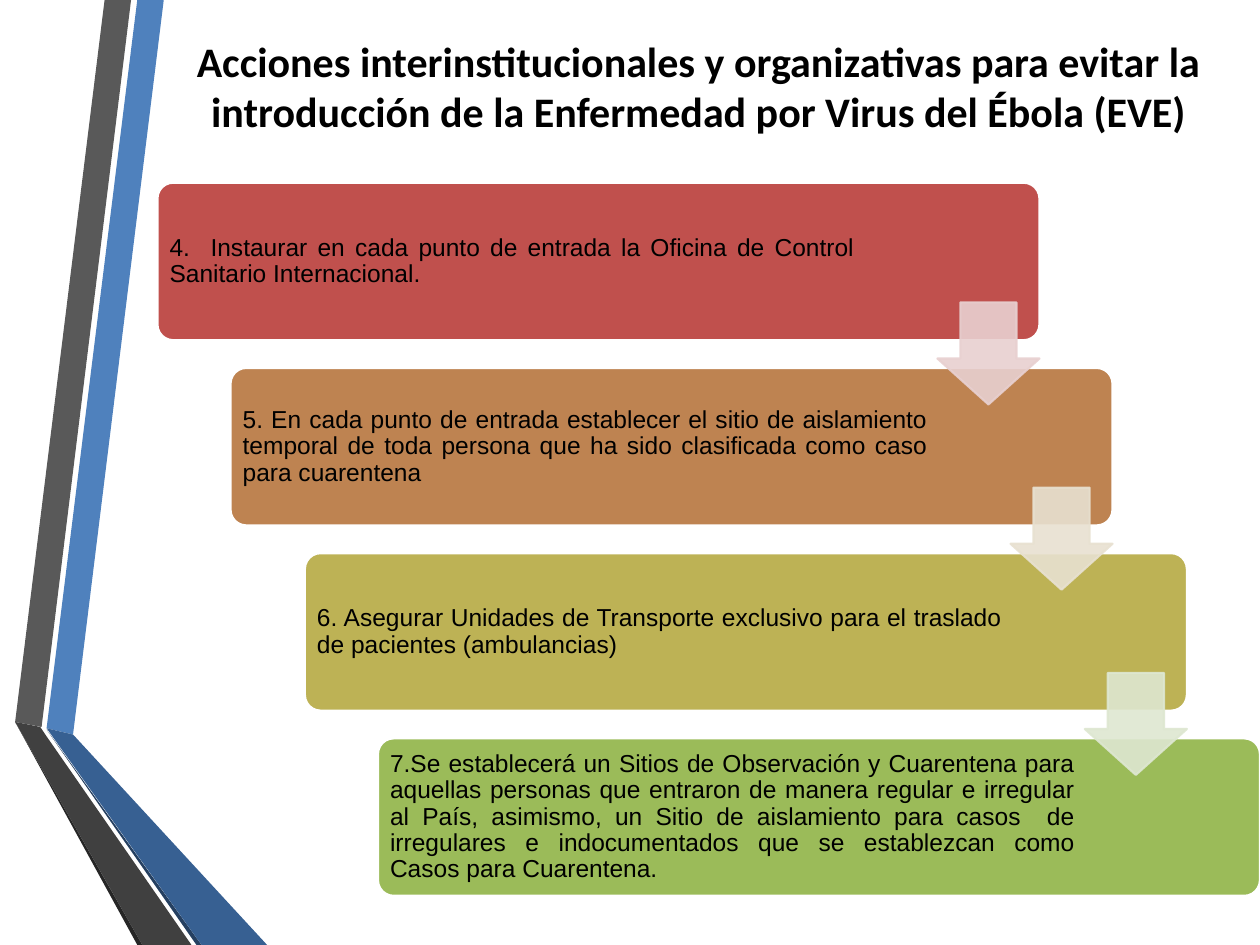
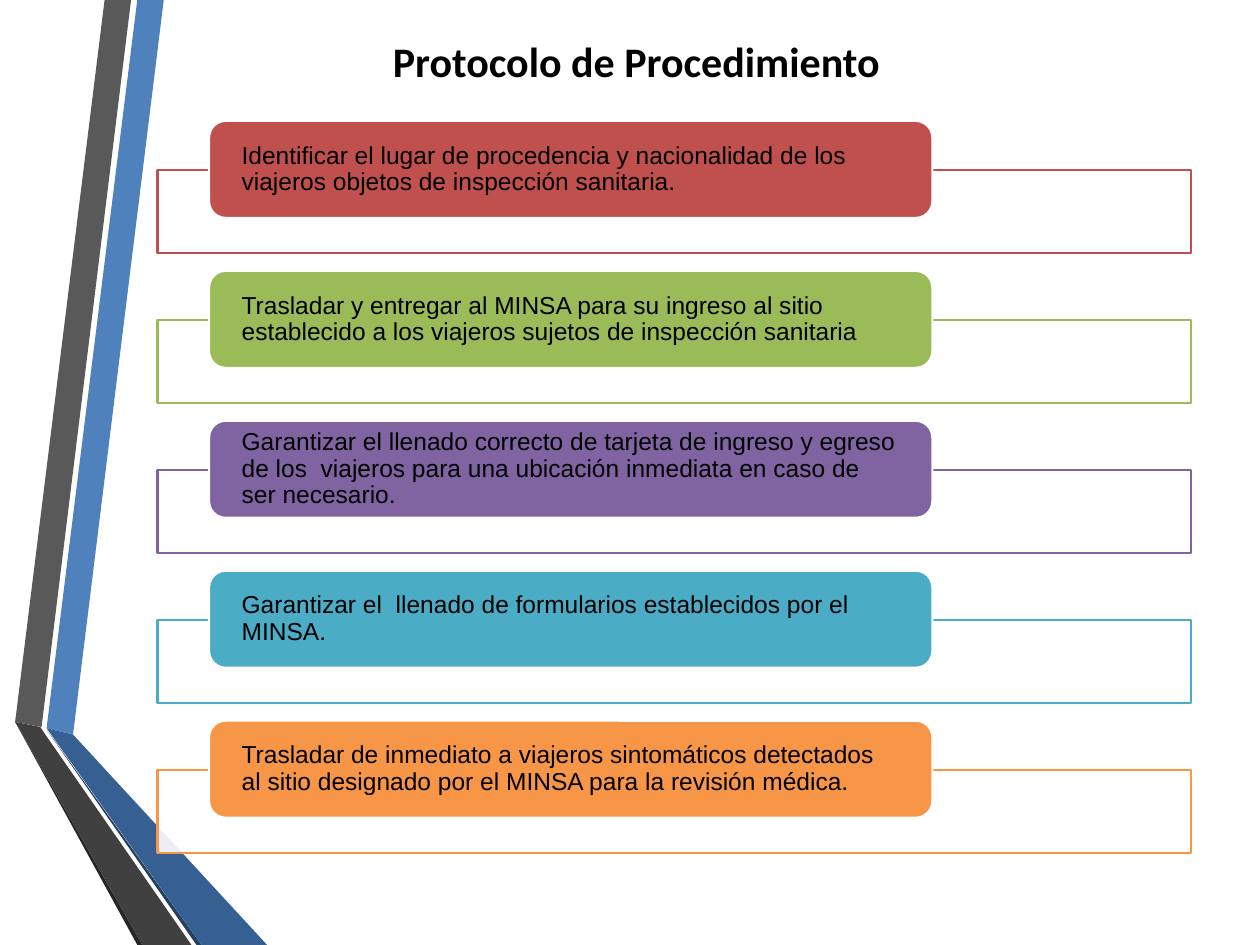
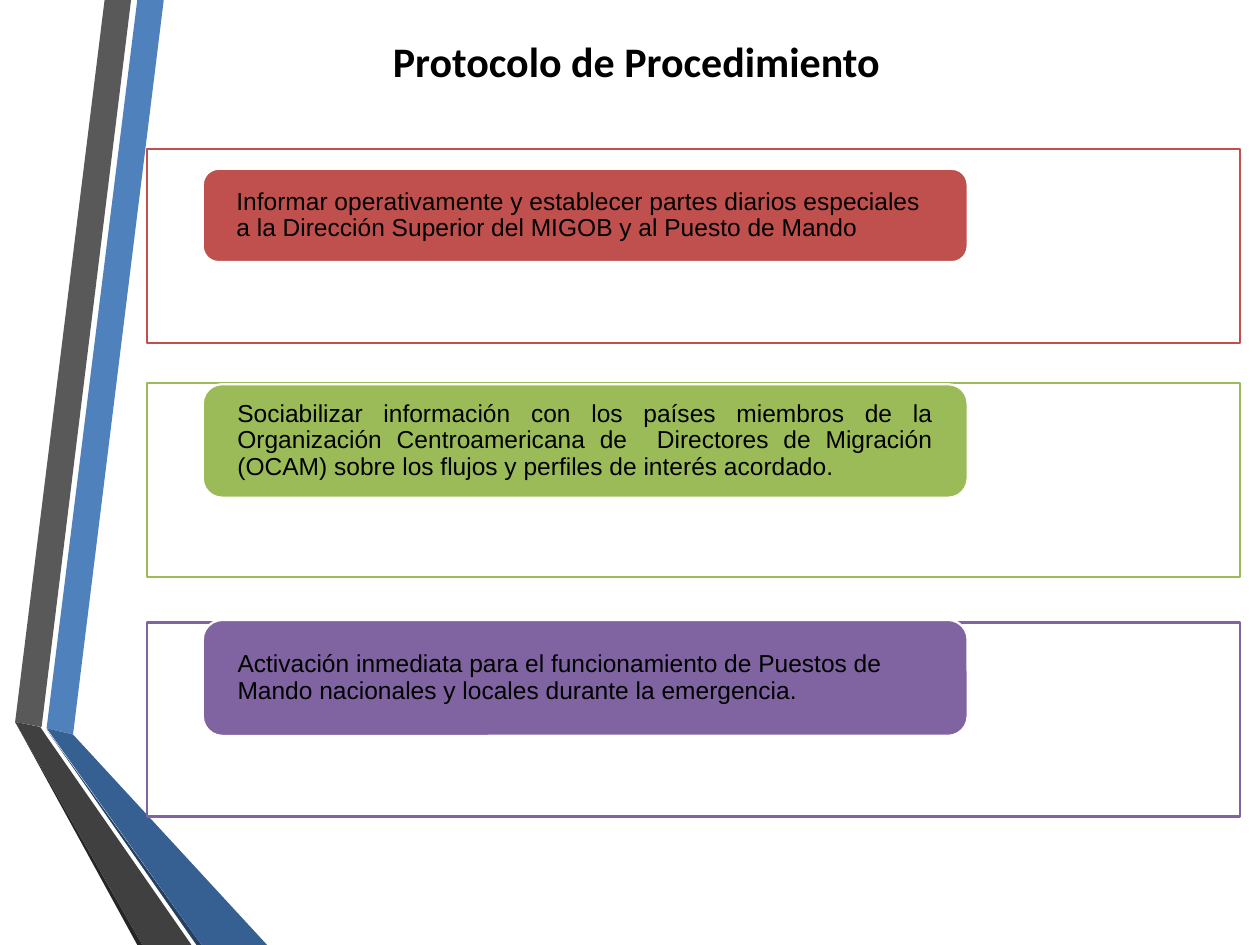
from lxml.etree import SubElement
from pptx import Presentation
from pptx.dml.color import RGBColor
from pptx.enum.shapes import MSO_SHAPE as Shape
from pptx.enum.text import MSO_ANCHOR as Anchor, MSO_AUTO_SIZE as AutoSize, PP_ALIGN as Align
from pptx.oxml.ns import qn
from pptx.util import Pt

PX = 9144
COLORS = {
    "black": "000000", "white": "FFFFFF",
    "red": "C0504D", "copper": "BE8351", "olive": "BDB255", "green": "9BBB59",
    "purple": "8064A2", "teal": "4BACC6", "orange": "F79646",
    "pale red": "E8D0D0", "pale copper": "E8E1D1", "pale green": "DEE7D1",
    "band blue": "4F81BD", "fold blue": "376092", "edge blue": "254061",
    "band gray": "595959", "fold gray": "404040", "edge gray": "262626",
}
RIBBONS = [
    ("band blue", [(37, 578), (58, 583), (130, 0), (109, 0)]),
    ("band gray", [(104, 0), (83, 0), (12, 573), (33, 577)]),
    ("edge gray", [(12, 573), (109, 750), (113, 750)]),
    ("edge blue", [(37, 579), (156, 750), (160, 750)]),
    ("fold blue", [(37, 578), (160, 750), (212, 750), (58, 583)]),
    ("fold gray", [(152, 750), (36, 583), (32, 577), (12, 573), (113, 750)]),
]
ACTIONS = [
    ("red", "4.  Instaurar en cada punto de entrada la Oficina de Control Sanitario Internacional."),
    ("copper", "5. En cada punto de entrada establecer el sitio de aislamiento temporal de toda "
               "persona que ha sido clasificada como caso para cuarentena"),
    ("olive", "6. Asegurar Unidades de Transporte exclusivo para el traslado de pacientes (ambulancias)"),
    ("green", "7.Se establecerá un Sitios de Observación y Cuarentena para aquellas personas que "
              "entraron de manera regular e irregular al País, asimismo, un Sitio de aislamiento "
              "para casos  de irregulares e indocumentados que se establezcan como Casos para Cuarentena."),
]
PROCEDURES = [
    ("red", "Identificar el lugar de procedencia y nacionalidad de los viajeros objetos de "
            "inspección sanitaria."),
    ("green", "Trasladar y entregar al MINSA para su ingreso al sitio establecido a los viajeros "
              "sujetos de inspección sanitaria"),
    ("purple", "Garantizar el llenado correcto de tarjeta de ingreso y egreso de los  viajeros para "
               "una ubicación inmediata en caso de ser necesario."),
    ("teal", "Garantizar el  llenado de formularios establecidos por el MINSA."),
    ("orange", "Trasladar de inmediato a viajeros sintomáticos detectados al sitio designado por el "
               "MINSA para la revisión médica."),
]
REPORTS = [
    ("red", 118, 134, 74, Align.LEFT,
     "Informar operativamente y establecer partes diarios especiales a la Dirección Superior "
     "del MIGOB y al Puesto de Mando"),
    ("green", 304, 305, 90, Align.JUSTIFY,
     "Sociabilizar información con los países miembros de la Organización Centroamericana de  "
     "Directores de Migración (OCAM) sobre los flujos y perfiles de interés acordado."),
    ("purple", 494, 492, 92, Align.LEFT,
     "Activación inmediata para el funcionamiento de Puestos de Mando nacionales y locales "
     "durante la emergencia."),
]
PROTOCOL_TITLE = "Protocolo de Procedimiento"
PROTOCOL_BOX = (55, 23, 900, 50)


class Deck:
    def __init__(self):
        self.prs = Presentation()
        self.prs.slide_width, self.prs.slide_height = 1000 * PX, 750 * PX
        self.layout = self.prs.slide_layouts[5]
        self.slide = None

    def start(self, title, box):
        self.slide = self.prs.slides.add_slide(self.layout)
        if len(self.prs.slides) == 1:
            self.ribbons()
        heading = self.slide.shapes.title
        heading.left, heading.top, heading.width, heading.height = (n * PX for n in box)
        heading.text_frame.auto_size = AutoSize.NONE
        self.put_text(heading, title, 24, "Calibri", Align.CENTER, Anchor.TOP, bold=True)

    def ribbons(self):
        for place, (color, points) in enumerate(RIBBONS, 2):
            builder = self.slide.shapes.build_freeform(*points[0], scale=PX)
            builder.add_line_segments(points[1:], close=True)
            ribbon = builder.convert_to_shape()
            self.paint(ribbon, color)
            self.layout.shapes.element.insert(place, ribbon.element)

    def put_text(self, holder, text, size, font, align, anchor, bold=False):
        frame = holder.text_frame
        frame.word_wrap = True
        frame.vertical_anchor = anchor
        paragraph = frame.paragraphs[0]
        paragraph.alignment = align
        run = paragraph.add_run()
        run.text = text
        run.font.size, run.font.name, run.font.bold = Pt(size), font, bold
        run.font.color.rgb = RGBColor.from_string(COLORS["black"])
        return paragraph

    def paint(self, shape, fill, line=None, opacity=100):
        shape.shadow.inherit = False
        shape.fill.solid()
        shape.fill.fore_color.rgb = RGBColor.from_string(COLORS[fill])
        if line:
            shape.line.width = Pt(1.25)
            shape.line.color.rgb = RGBColor.from_string(COLORS[line])
        else:
            shape.line.fill.background()
        if opacity < 100:
            for color in shape.element.spPr.iter(qn("a:srgbClr")):
                if fill == line or color.getparent().getparent().tag != qn("a:ln"):
                    SubElement(color, qn("a:alpha"), val=str(opacity * 1000))

    def shape(self, kind, box, fill, line, opacity=100, adjust=()):
        shape = self.slide.shapes.add_shape(kind, *(n * PX for n in box))
        for index, value in enumerate(adjust):
            shape.adjustments[index] = value
        self.paint(shape, fill, line, opacity)
        return shape

    def card(self, box, color, text, insets, align=Align.LEFT, corner=0.17):
        card = self.shape(Shape.ROUNDED_RECTANGLE, box, color, "white", adjust=(corner,))
        frame = card.text_frame
        frame.margin_left, frame.margin_top, frame.margin_right, frame.margin_bottom = (
            n * PX for n in insets)
        self.put_text(card, text, 14, "Arial", align, Anchor.MIDDLE).line_spacing = 0.9

    def frame(self, box, color):
        self.shape(Shape.RECTANGLE, box, "white", color, opacity=90)

    def arrow(self, left, top, color):
        self.shape(Shape.DOWN_ARROW, (left, top, 81, 81), color, color, 90, (0.55, 0.45))


def actions(deck):
    deck.start("Acciones interinstitucionales y organizativas para evitar la introducción de la "
               "Enfermedad por Virus del Ébola (EVE)", (109, 23, 891, 121))
    corners = [(125 + round(step * 175 / 3), 145 + step * 147) for step in range(len(ACTIONS))]
    for (left, top), (color, text) in zip(corners, ACTIONS):
        deck.card((left, top, 700, 125), color, text, (6, 6, 143, 6), Align.JUSTIFY, 0.1)
    for (left, top), color in zip(corners, ("pale red", "pale copper", "pale green")):
        deck.arrow(left + 619, top + 95, color)


def procedures(deck):
    deck.start(PROTOCOL_TITLE, PROTOCOL_BOX)
    for row, (color, text) in enumerate(PROCEDURES):
        top = 96 + row * 119
        deck.frame((125, top + 39, 820, 66), color)
        deck.card((166, top, 574, 77), color, text, (22, 0, 22, 0))


def reports(deck):
    deck.start(PROTOCOL_TITLE, PROTOCOL_BOX)
    for color, frame_top, card_top, card_height, align, text in REPORTS:
        deck.frame((117, frame_top, 867, 154), color)
        deck.card((161, card_top, 607, card_height), color, text, (23, 0, 23, 0), align)


def main():
    deck = Deck()
    actions(deck)
    procedures(deck)
    reports(deck)
    deck.prs.save("out.pptx")


if __name__ == "__main__":
    main()
